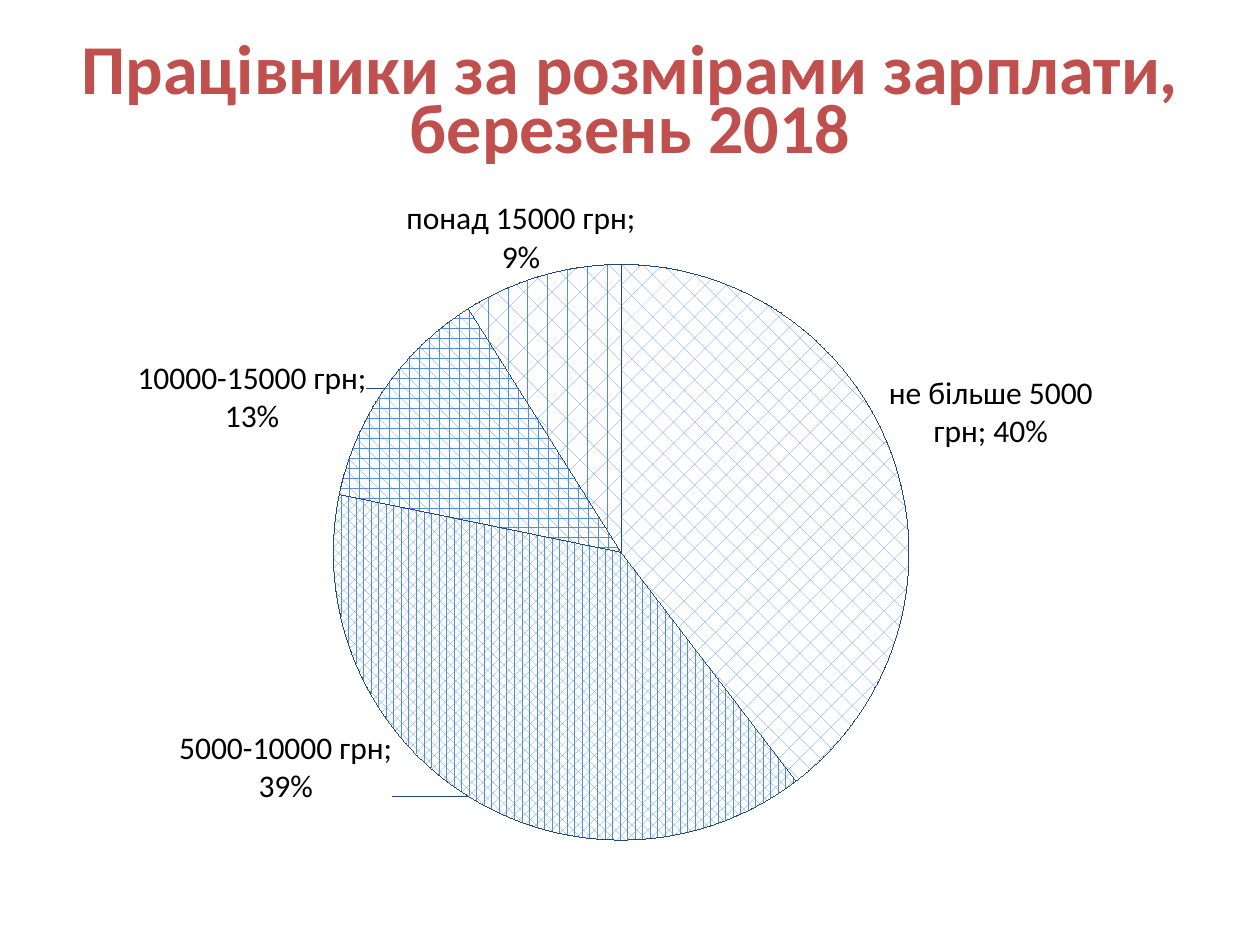
from lxml import etree
from pptx import Presentation
from pptx import util as u
from pptx.chart.data import CategoryChartData
from pptx.dml.color import RGBColor
from pptx.enum import chart as charts, dml, text
from pptx.oxml.ns import qn

WIDTH, HEIGHT = u.Inches(10), u.Inches(7.5)
FONT = "Calibri"
COLOURS = {"title": "C0504D", "label": "000000", "pattern": "558ED5",
           "paper": "FFFFFF", "outline": "1F497D"}
PATTERN = dml.MSO_PATTERN
# category, share, pattern, label shift as shares of the chart's size
SLICES = [
    ("не більше 5000 грн", 0.40, PATTERN.DIAGONAL_BRICK, (-0.01, -0.01)),
    ("5000-10000 грн", 0.39, PATTERN.PERCENT_60, (-0.06, -0.1)),
    ("10000-15000 грн", 0.13, PATTERN.PLAID, (-0.01, 0.07)),
    ("понад 15000 грн", 0.09, PATTERN.DIVOT, (0.08, 0.01)),
]


def colour(name):
    return RGBColor.from_string(COLOURS[name])


def place(left, top, width, height):
    """Turn shares of the slide into lengths."""
    return [round(share * side) for share, side in
            zip((left, top, width, height), (WIDTH, HEIGHT) * 2)]


def write_text(frame, words, size, ink, bold=False, spacing=1.0):
    frame.word_wrap = True
    frame.auto_size = text.MSO_AUTO_SIZE.NONE
    frame.vertical_anchor = text.MSO_ANCHOR.MIDDLE
    para = frame.paragraphs[0]
    para.alignment = text.PP_ALIGN.CENTER
    para.line_spacing = spacing
    span = para.add_run()
    span.text = words
    span.font.name, span.font.size, span.font.bold = FONT, u.Pt(size), bold
    span.font.color.rgb = colour(ink)


def manual_layout(**values):
    layout = etree.Element(qn("c:layout"))
    manual = etree.SubElement(layout, qn("c:manualLayout"))
    for name, value in values.items():
        etree.SubElement(manual, qn("c:" + name)).set("val", str(value))
    return layout


def add_title(page, words):
    title = page.shapes.title
    title.left, title.top, title.width, title.height = place(0, 0.04, 1, 0.145)
    write_text(title.text_frame, words, 40, "title", bold=True, spacing=0.7)


def style_slice(point, pattern):
    fill = point.format.fill
    fill.patterned()
    fill.pattern = pattern
    fill.fore_color.rgb = colour("pattern")
    fill.back_color.rgb = colour("paper")
    # No width here: the slices keep a hairline
    point.format.line.color.rgb = colour("outline")


def style_leader_lines(chart):
    shown = next(chart.element.iter(qn("c:showLeaderLines")))
    shown.set("val", "1")
    leaders = etree.Element(qn("c:leaderLines"))
    tree = leaders
    for tag in ("c:spPr", "a:ln", "a:solidFill", "a:srgbClr"):
        tree = etree.SubElement(tree, qn(tag))
    tree.set("val", COLOURS["outline"])
    shown.addnext(leaders)


def style_labels(chart, series):
    labels = series.data_labels
    labels.show_value = labels.show_category_name = True
    labels.number_format, labels.number_format_is_linked = "0%", False
    labels.position = charts.XL_LABEL_POSITION.OUTSIDE_END
    for index in range(len(SLICES)):
        series.points[index].data_label.position = charts.XL_LABEL_POSITION.OUTSIDE_END

    # Shift each label from its usual place
    for label, (_, _, _, (x, y)) in zip(chart.element.iter(qn("c:dLbl")), SLICES):
        index = label.find(qn("c:idx"))
        index.addnext(etree.Element(qn("c:numFmt"), formatCode="0%", sourceLinked="0"))
        index.addnext(manual_layout(x=x, y=y))
        label.find(qn("c:showCatName")).set("val", "1")

    # Part the category from the value
    for shown in list(chart.element.iter(qn("c:showBubbleSize"))):
        separator = etree.Element(qn("c:separator"))
        separator.text = "; "
        shown.addnext(separator)
    style_leader_lines(chart)


def add_pie(page):
    data = CategoryChartData(number_format="0%")
    data.categories = [row[0] for row in SLICES]
    data.add_series("Series 1", [row[1] for row in SLICES])
    chart = page.shapes.add_chart(charts.XL_CHART_TYPE.PIE,
                                  *place(0.028, 0.196, 0.953, 0.777), data).chart
    chart.has_legend = chart.has_title = False
    chart.font.name, chart.font.size = FONT, u.Pt(18)
    chart.font.color.rgb = colour("label")

    series = chart.plots[0].series[0]
    series.format.line.color.rgb = colour("outline")
    series.format.line.width = u.Pt(0.75)
    for index, (_, _, pattern, _) in enumerate(SLICES):
        style_slice(series.points[index], pattern)
    style_labels(chart, series)

    # Fix the pie's place inside the chart
    area = next(chart.element.iter(qn("c:plotArea")))
    for old in area.findall(qn("c:layout")):
        area.remove(old)
    area.insert(0, manual_layout(layoutTarget="inner", xMode="edge", yMode="edge",
                                 x=0.248, y=0.108, w=0.48, h=0.784))


def main():
    deck = Presentation()
    deck.slide_width, deck.slide_height = WIDTH, HEIGHT
    page = deck.slides.add_slide(deck.slide_layouts[5])
    add_title(page, "Працівники за розмірами зарплати, березень 2018")
    add_pie(page)
    deck.save("out.pptx")


if __name__ == "__main__":
    main()
